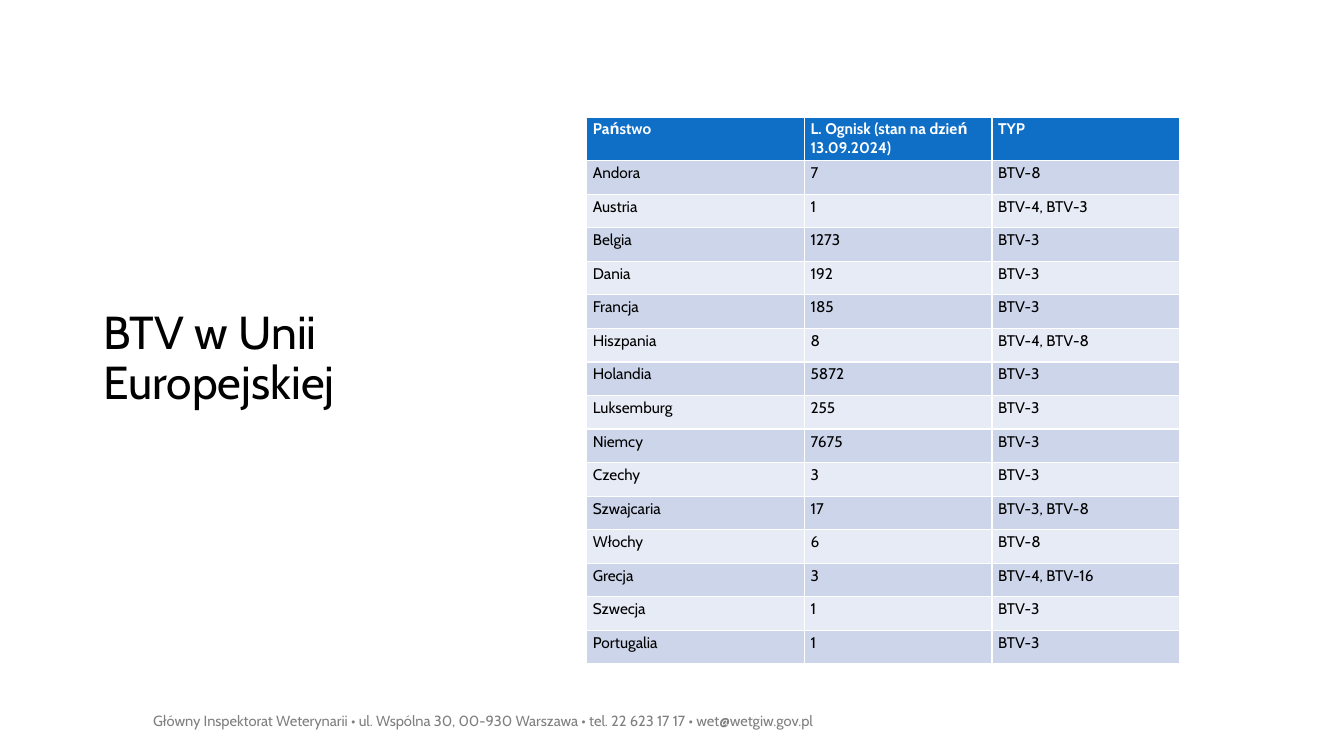
from pptx import Presentation
from pptx.dml.color import RGBColor
from pptx.enum.text import MSO_ANCHOR as Anchor
from pptx.util import Inches, Pt

presentation = Presentation()
presentation.slide_width = Inches(13.33)
presentation.slide_height = Inches(7.5)
slide = presentation.slides.add_slide(presentation.slide_layouts[6])


def place(left, top, width, height):
    """Turn percentages of the slide's size into lengths."""
    across, down = presentation.slide_width / 100, presentation.slide_height / 100
    return [round(length) for length in
            (left * across, top * down, width * across, height * down)]


def write(text_frame, text, size, color, bold=False):
    text_frame.word_wrap = True
    paragraph = text_frame.paragraphs[0]
    paragraph.text = text
    paragraph.font.name = "Cabin"
    paragraph.font.size = Pt(size)
    paragraph.font.bold = bold
    paragraph.font.color.rgb = RGBColor.from_string(color)
    return paragraph


# Footer, indented by one default tab
footer = slide.shapes.add_textbox(*place(6.9, 93.47, 86.27, 7.73))
write(footer.text_frame,
      "\tGłówny Inspektorat Weterynarii • ul. Wspólna 30, 00-930 Warszawa"
      " • tel. 22 623 17 17 • wet@wetgiw.gov.pl", 10.5, "808080")

# Title
title = slide.shapes.add_textbox(*place(6.98, 16.53, 22.5, 62))
title.text_frame.vertical_anchor = Anchor.MIDDLE
write(title.text_frame, "BTV w Unii Europejskiej", 33, "000000").line_spacing = 0.9

# Outbreaks by country
outbreaks = [
    ("Państwo", "L. Ognisk (stan na dzień 13.09.2024)", "TYP"),
    ("Andora", 7, "BTV-8"),
    ("Austria", 1, "BTV-4, BTV-3"),
    ("Belgia", 1273, "BTV-3"),
    ("Dania", 192, "BTV-3"),
    ("Francja", 185, "BTV-3"),
    ("Hiszpania", 8, "BTV-4, BTV-8"),
    ("Holandia", 5872, "BTV-3"),
    ("Luksemburg", 255, "BTV-3"),
    ("Niemcy", 7675, "BTV-3"),
    ("Czechy", 3, "BTV-3"),
    ("Szwajcaria", 17, "BTV-3, BTV-8"),
    ("Włochy", 6, "BTV-8"),
    ("Grecja", 3, "BTV-4, BTV-16"),
    ("Szwecja", 1, "BTV-3"),
    ("Portugalia", 1, "BTV-3"),
]
column_shares = [16.2, 13.95, 13.95]
header_share, row_share = 5.8, 4.44
table_height = header_share + row_share * (len(outbreaks) - 1)
table = slide.shapes.add_table(
    len(outbreaks), len(column_shares),
    *place(43.66, 15.47, sum(column_shares), table_height)).table

for column, share in zip(table.columns, column_shares):
    column.width = round(presentation.slide_width * share / 100)

# The default table style supplies the white borders
for row_index, values in enumerate(outbreaks):
    is_header = row_index == 0
    share = header_share if is_header else row_share
    table.rows[row_index].height = round(presentation.slide_height * share / 100)
    band = "0F6FC6" if is_header else ("E7EBF5", "CCD5EA")[row_index % 2]
    for column_index, value in enumerate(values):
        cell = table.cell(row_index, column_index)
        cell.margin_left = cell.margin_right = Inches(0.06)
        cell.margin_top = cell.margin_bottom = Inches(0.03)
        cell.fill.solid()
        cell.fill.fore_color.rgb = RGBColor.from_string(band)
        write(cell.text_frame, str(value), 11,
              "FFFFFF" if is_header else "000000", bold=is_header)

presentation.save("out.pptx")
